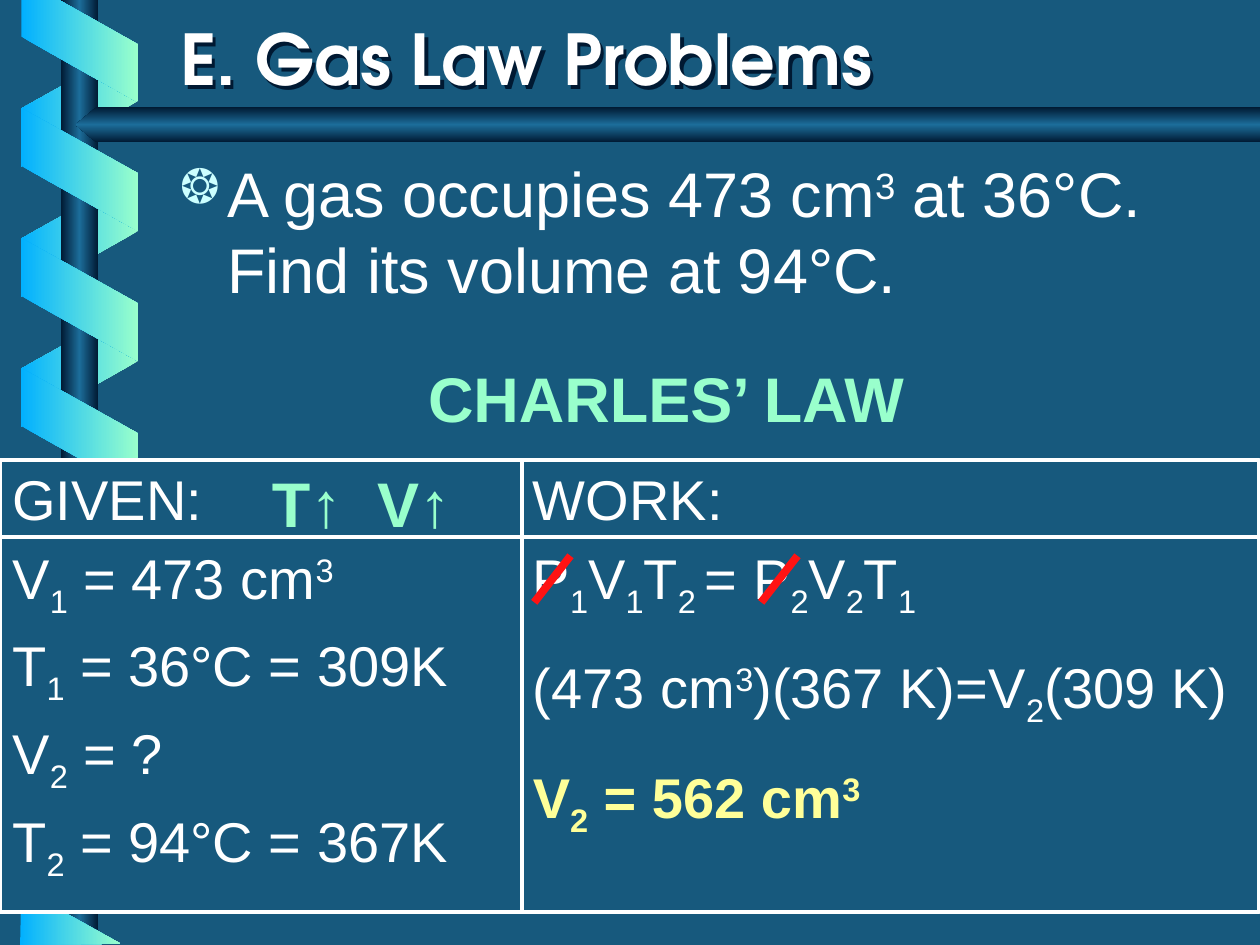
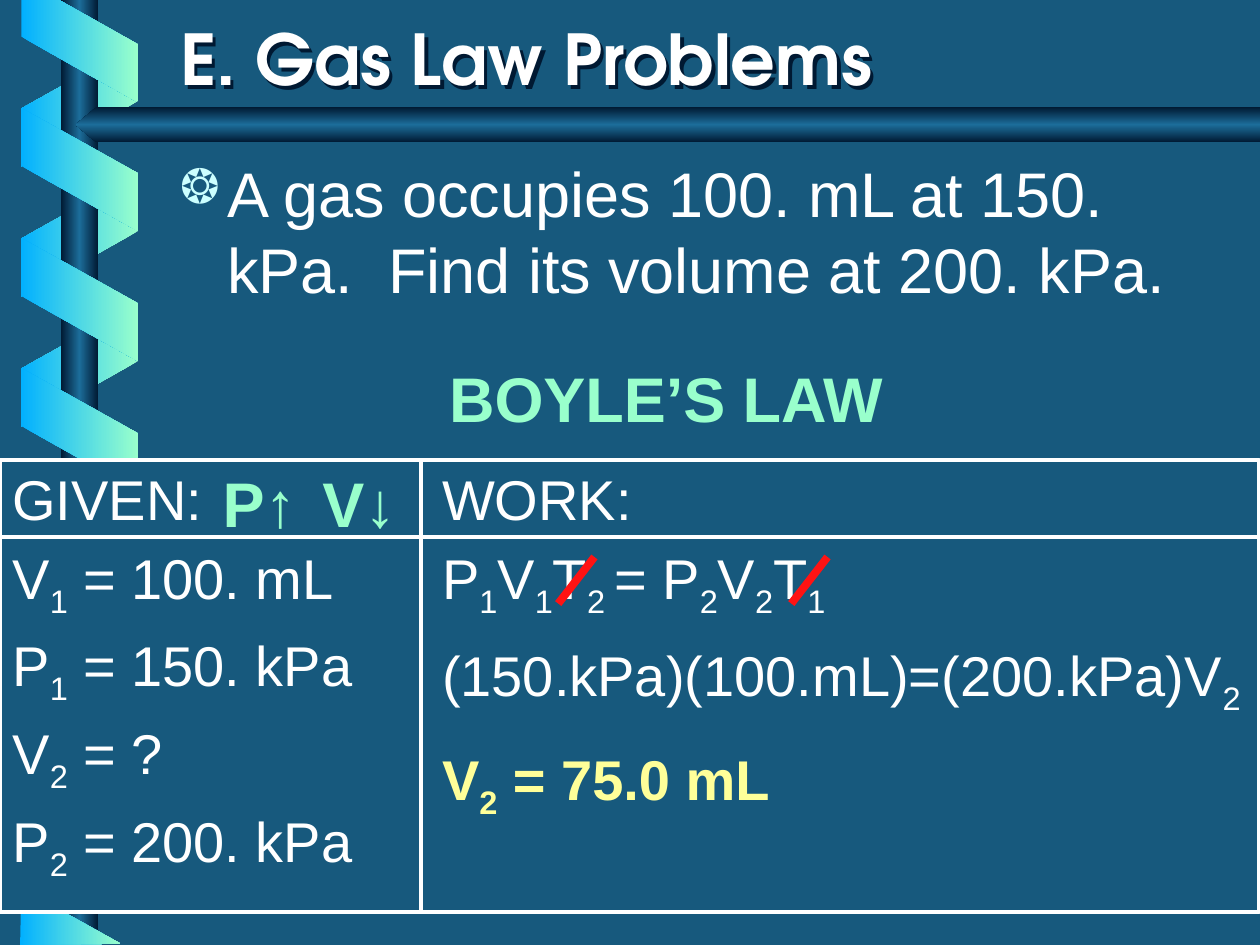
from pptx import Presentation
from pptx.dml.color import RGBColor
from pptx.enum.shapes import MSO_CONNECTOR, MSO_SHAPE
from pptx.enum.text import MSO_ANCHOR, PP_ALIGN
from pptx.oxml import parse_xml
from pptx.oxml.ns import nsdecls, qn
from pptx.util import Pt

PARALLELOGRAM = MSO_SHAPE.PARALLELOGRAM
RECTANGLE = MSO_SHAPE.RECTANGLE
PENTAGON = MSO_SHAPE.PENTAGON
STRAIGHT = MSO_CONNECTOR.STRAIGHT
LEFT, CENTER = PP_ALIGN.LEFT, PP_ALIGN.CENTER
BOTTOM = MSO_ANCHOR.BOTTOM

color = RGBColor.from_string
BACKGROUND, WHITE, MINT, YELLOW, RED = "17597D", "FFFFFF", "99FFCC", "FFFF99", "FF1313"
BLUE_TO_MINT = ["01B0FF", MINT]
MINT_TO_BLUE = [MINT, "01B0FF"]
TUBE = ["001932", "1C6D9A", "001932"]
BODY_FONT, TITLE_FONT = "Arial", "TeX Gyre Adventor"
BASELINES = {"_": "-25000", "^": "30000"}

# Ribbon and panel geometry, in points
RIBBON_LEFT, RIBBON_WIDTH, RIBBON_HEIGHT, RIBBON_STEP = 10.1, 70.5, 67, 74.3
BACK_TOPS = [26.5 + RIBBON_STEP * turn for turn in range(4)] + [471.6]
FRONT_TOPS = [63.3 + RIBBON_STEP * turn for turn in range(3)]
RIBBON_ENDS = [
    [(12.2, 0), (12.2, 20.9), (78.5, 58.3), (78.5, 25.2), (33.8, 0)],
    [(69, 539.3), (12.2, 507.6), (11.5, 540)],
]
PANEL_TOP, PANEL_BOTTOM, HEADER_BOTTOM = 262.8, 521.3, 306.7
TEXT_TOP = 262

# In the text, "|_" starts a subscript, "|^" a superscript and "|" ends either
EQUATION = "P|_1|V|_1|T|_2 |= P|_2|V|_2|T|_1"
PROBLEMS = [
    {
        "question": "A gas occupies 473 cm|^3| at 36°C. Find its volume at 94°C.",
        "law": "CHARLES’ LAW",
        "given": ["GIVEN:", "V|_1| = 473 cm|^3", "T|_1| = 36°C = 309K",
                  "V|_2| = ?", "T|_2| = 94°C = 367K"],
        "given_width": 297.4,
        "work_left": 297.4,
        "divider": 298.1,
        "trends": [("T↑", 148.3, 64.8, LEFT), ("V↑", 198.7, 75.6, CENTER)],
        "strikes": [305.3, 435],
        "strike_bottom": 344.2,
        "solution": ["(473 cm|^3|)(367 K)=V|_2|(309 K)", "V|_2| = 562 cm|^3"],
        "solution_top": 369.4,
        "solution_gap": 19.2,
    },
    {
        "question": "A gas occupies 100. mL at 150. kPa.  Find its volume at 200. kPa.",
        "law": "BOYLE’S LAW",
        "given": ["GIVEN:", "V|_1| = 100. mL", "P|_1| = 150. kPa",
                  "V|_2| = ?", "P|_2| = 200. kPa"],
        "given_width": 258.5,
        "work_left": 245.5,
        "divider": 240.5,
        "trends": [("P↑", 120.2, 64.8, LEFT), ("V↓", 171.4, 67.7, CENTER)],
        "strikes": [319, 452.2],
        "strike_bottom": 344.9,
        "solution": ["(150.kPa)(100.mL)=(200.kPa)V|_2", "V|_2| = 75.0 mL"],
        "solution_top": 362.2,
        "solution_gap": 16,
    },
]


def paint_gradient(shape, colors, angle=0):
    """Fill a shape with evenly spaced colours, fixed to the slide's axes."""
    shape.shadow.inherit = False
    shape.line.fill.background()
    shape.fill.background()
    stops = "".join(
        f'<a:gs pos="{100000 * i // (len(colors) - 1)}"><a:srgbClr val="{value}"/></a:gs>'
        for i, value in enumerate(colors))
    gradient = parse_xml(
        f'<a:gradFill {nsdecls("a")} rotWithShape="0"><a:gsLst>{stops}</a:gsLst>'
        f'<a:lin ang="{angle * 60000}" scaled="0"/></a:gradFill>')
    properties = shape._element.spPr
    properties.replace(properties.find(qn("a:noFill")), gradient)


def write_text(slide, box, lines, size=32, ink=WHITE, bold=False, font=BODY_FONT,
               align=LEFT, gap=6.4):
    """Add a text box with one paragraph per line and gap points between them."""
    text_box = slide.shapes.add_textbox(*map(Pt, box))
    frame = text_box.text_frame
    frame.word_wrap = True
    for i, line in enumerate(lines):
        paragraph = frame.add_paragraph() if i else frame.paragraphs[0]
        paragraph.alignment = align
        if i:
            paragraph.space_before = Pt(gap)
        for part in filter(None, line.split("|")):
            run = paragraph.add_run()
            run.text = part[1:] if part[0] in BASELINES else part
            run.font.name = font
            run.font.size = Pt(size)
            run.font.bold = bold
            run.font.color.rgb = color(ink)
            if part[0] in BASELINES:
                run._r.get_or_add_rPr().set("baseline", BASELINES[part[0]])
    return text_box


deck = Presentation()
deck.slide_width, deck.slide_height = Pt(720), Pt(540)

for problem in PROBLEMS:
    slide = deck.slides.add_slide(deck.slide_layouts[6])
    slide.background.fill.solid()
    slide.background.fill.fore_color.rgb = color(BACKGROUND)
    shapes = slide.shapes

    # Ribbon behind the pole, the pole, then the ribbon in front
    for tops, rotation, colors in ((BACK_TOPS, 90, MINT_TO_BLUE),
                                   (FRONT_TOPS, 270, BLUE_TO_MINT)):
        for top in tops:
            ribbon = shapes.add_shape(PARALLELOGRAM, Pt(RIBBON_LEFT), Pt(top),
                                      Pt(RIBBON_WIDTH), Pt(RIBBON_HEIGHT))
            ribbon.adjustments[0] = 0.56
            ribbon.rotation = rotation
            if tops is BACK_TOPS:
                ribbon._element.spPr.xfrm.set("flipH", "1")
            paint_gradient(ribbon, colors)
        if tops is BACK_TOPS:
            pole = shapes.add_shape(RECTANGLE, Pt(34.7), 0, Pt(21.6), Pt(540))
            paint_gradient(pole, TUBE)
    for start, *corners in RIBBON_ENDS:
        outline = shapes.build_freeform(Pt(start[0]), Pt(start[1]))
        outline.add_line_segments([(Pt(x), Pt(y)) for x, y in corners])
        paint_gradient(outline.convert_to_shape(), BLUE_TO_MINT)

    # Bar under the title
    title_bar = shapes.add_shape(PENTAGON, Pt(43.2), Pt(61.2), Pt(676.8), Pt(20.2))
    title_bar.adjustments[0] = 0.59
    title_bar._element.spPr.xfrm.set("flipH", "1")
    paint_gradient(title_bar, TUBE, 90)

    # Panel for the given values and the work
    panel = shapes.add_shape(RECTANGLE, 0, Pt(PANEL_TOP), Pt(719.3),
                             Pt(PANEL_BOTTOM - PANEL_TOP))
    panel.shadow.inherit = False
    panel.fill.solid()
    panel.fill.fore_color.rgb = color(BACKGROUND)
    panel.line.color.rgb = color(WHITE)
    panel.line.width = Pt(2.25)

    work_left = problem["work_left"]
    work_width = 720 - work_left
    write_text(slide, (0, TEXT_TOP, problem["given_width"], 278), problem["given"])
    write_text(slide, (work_left, TEXT_TOP, work_width, 110), ["WORK:", EQUATION])

    # Title with its shadow
    title = write_text(slide, (95.8, 0, 612, 60.5), ["E. Gas Law Problems"],
                       size=40, bold=True, font=TITLE_FONT)
    title.text_frame.vertical_anchor = BOTTOM
    title._element.spPr.append(parse_xml(
        f'<a:effectLst {nsdecls("a")}><a:outerShdw dist="35921" dir="2700000" algn="ctr" '
        'rotWithShape="0"><a:srgbClr val="001932"/></a:outerShdw></a:effectLst>'))

    # Question with its bullet
    question = write_text(slide, (95.8, 85, 612, 172.8), [problem["question"]], size=36)
    bullet = question.text_frame.paragraphs[0]._p.get_or_add_pPr()
    bullet.set("marL", str(Pt(27)))
    bullet.set("indent", str(-Pt(27)))
    for tag in ('<a:buClr {}><a:srgbClr val="CCFFFF"/></a:buClr>',
                '<a:buSzPct {} val="75000"/>', '<a:buChar {} char="❂"/>'):
        bullet.append(parse_xml(tag.format(nsdecls("a"))))

    # Law and the direction each quantity takes
    write_text(slide, (178.6, 201.6, 404, 46), [problem["law"]],
               size=36, ink=MINT, bold=True, align=CENTER)
    for trend, left, width, align in problem["trends"]:
        write_text(slide, (left, TEXT_TOP, width, 46), [trend],
                   size=36, ink=MINT, bold=True, align=align)

    # Panel rules and the strokes that cancel the constant quantity
    divider, bottom = problem["divider"], problem["strike_bottom"]
    rules = [(divider, PANEL_TOP, divider, PANEL_BOTTOM, WHITE, 2.25),
             (0, HEADER_BOTTOM, 720, HEADER_BOTTOM, WHITE, 2.25)]
    rules += [(x, bottom, x + 20.7, bottom - 26.6, RED, 4.5) for x in problem["strikes"]]
    for *ends, ink, width in rules:
        rule = shapes.add_connector(STRAIGHT, *map(Pt, ends))
        rule.line.color.rgb = color(ink)
        rule.line.width = Pt(width)
        rule._element.spPr.append(parse_xml(f'<a:effectLst {nsdecls("a")}/>'))

    # Solution with the answer picked out
    solution = write_text(slide, (work_left, problem["solution_top"], work_width, 122),
                          problem["solution"], gap=problem["solution_gap"])
    for run in solution.text_frame.paragraphs[-1].runs:
        run.font.bold = True
        run.font.color.rgb = color(YELLOW)

deck.save("out.pptx")
